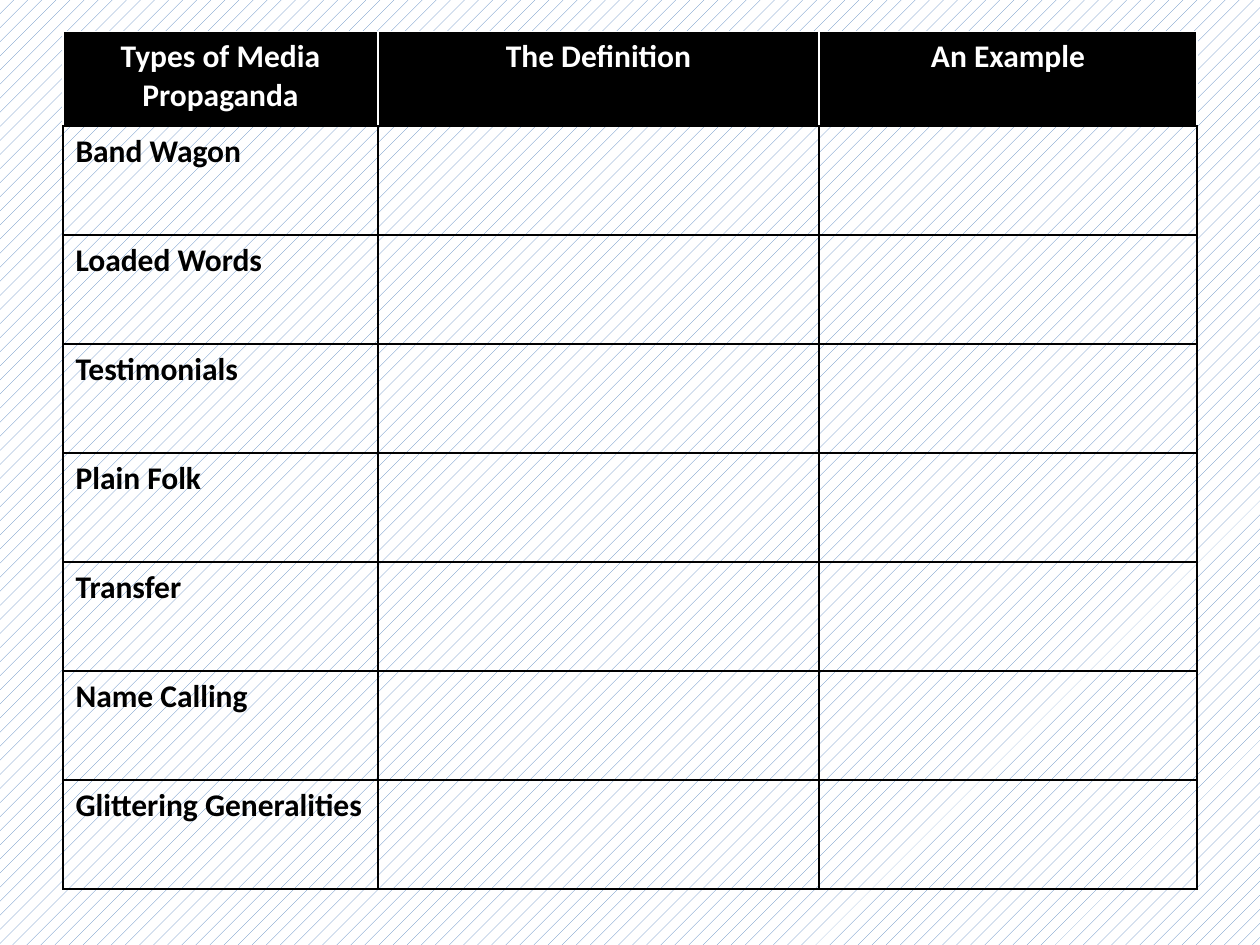
from dataclasses import dataclass

from lxml.etree import SubElement
from pptx import Presentation
from pptx.dml.color import RGBColor
from pptx.enum.dml import MSO_PATTERN
from pptx.enum.text import PP_ALIGN
from pptx.oxml.ns import qn
from pptx.util import Emu, Pt

EMU_PER_PX = 914400 // 200


@dataclass(frozen=True)
class Theme:
    font: str = "Calibri"
    size: int = 18
    border: int = 1
    black: str = "000000"
    white: str = "FFFFFF"
    accent: str = "4F81BD"


@dataclass(frozen=True)
class CellStyle:
    color: str
    edges: dict
    align: PP_ALIGN
    fill: str | None = None


THEME = Theme()
HEADER = CellStyle(
    THEME.white,
    {"lnL": THEME.white, "lnR": THEME.white, "lnT": THEME.white, "lnB": THEME.black},
    PP_ALIGN.CENTER,
    THEME.black,
)
BODY = CellStyle(
    THEME.black,
    dict.fromkeys(("lnL", "lnR", "lnT", "lnB"), THEME.black),
    PP_ALIGN.LEFT,
)

HEADINGS = ("Types of Media Propaganda", "The Definition", "An Example")
TECHNIQUES = (
    "Band Wagon",
    "Loaded Words",
    "Testimonials",
    "Plain Folk",
    "Transfer",
    "Name Calling",
    "Glittering Generalities",
)
COL_WIDTHS = (500, 700, 600)
HEADER_HEIGHT, BODY_HEIGHT = 150, 173


def px(n: int) -> Emu:
    return Emu(n * EMU_PER_PX)


def rgb(value: str) -> RGBColor:
    return RGBColor.from_string(value)


def set_borders(cell, edges: dict) -> None:
    tc_pr = cell._tc.get_or_add_tcPr()
    for edge, color in edges.items():
        ln = SubElement(tc_pr, qn(f"a:{edge}"), w=str(Pt(THEME.border)))
        SubElement(SubElement(ln, qn("a:solidFill")), qn("a:srgbClr"), val=color)


def draw_cell(cell, text: str, style: CellStyle) -> None:
    set_borders(cell, style.edges)
    if style.fill:
        cell.fill.solid()
        cell.fill.fore_color.rgb = rgb(style.fill)
    else:
        cell.fill.background()
    p = cell.text_frame.paragraphs[0]
    p.alignment = style.align
    if text:
        r = p.add_run()
        r.text = text
        for name, value in {"name": THEME.font, "size": Pt(THEME.size), "bold": True}.items():
            setattr(r.font, name, value)
        r.font.color.rgb = rgb(style.color)


def draw_background(s) -> None:
    fill = s.background.fill
    fill.patterned()
    fill.pattern = MSO_PATTERN.PERCENT_10
    fill.fore_color.rgb = rgb(THEME.accent)
    fill.back_color.rgb = rgb(THEME.white)


def draw_table(s, left: int, top: int) -> None:
    rows = [HEADINGS] + [(name, "", "") for name in TECHNIQUES]
    heights = [HEADER_HEIGHT] + [BODY_HEIGHT] * len(TECHNIQUES)
    table = s.shapes.add_table(
        len(rows), len(COL_WIDTHS), px(left), px(top), px(sum(COL_WIDTHS)), px(sum(heights))
    ).table
    table.horz_banding = False
    for col, width in zip(table.columns, COL_WIDTHS):
        col.width = px(width)
    for i, (row, height, texts) in enumerate(zip(table.rows, heights, rows)):
        row.height = px(height)
        for cell, text in zip(row.cells, texts):
            draw_cell(cell, text, BODY if i else HEADER)


def main() -> None:
    prs = Presentation()
    prs.slide_width, prs.slide_height = px(2000), px(1500)
    s = prs.slides.add_slide(prs.slide_layouts[6])
    draw_background(s)
    draw_table(s, 100, 50)
    prs.save("out.pptx")


if __name__ == "__main__":
    main()
